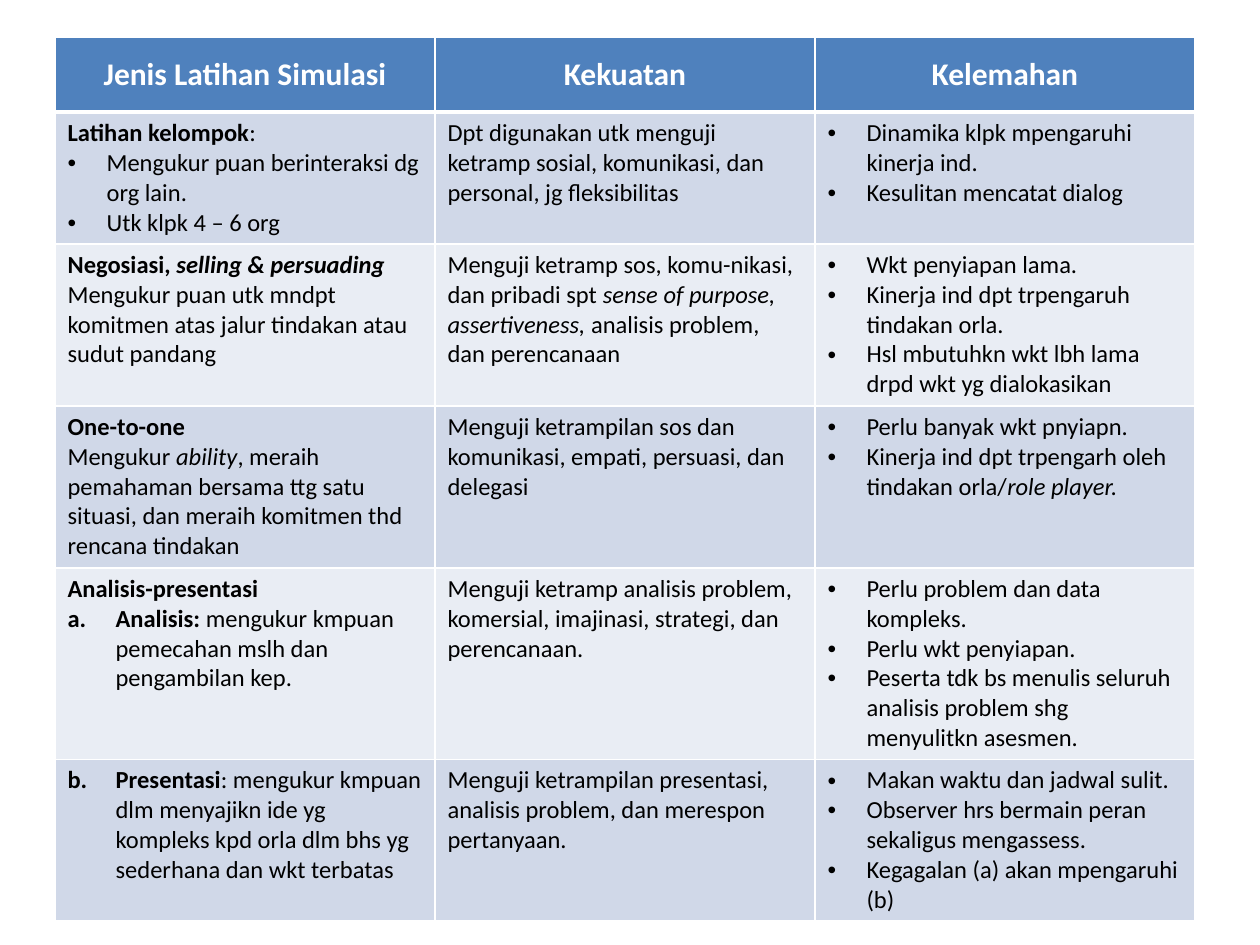
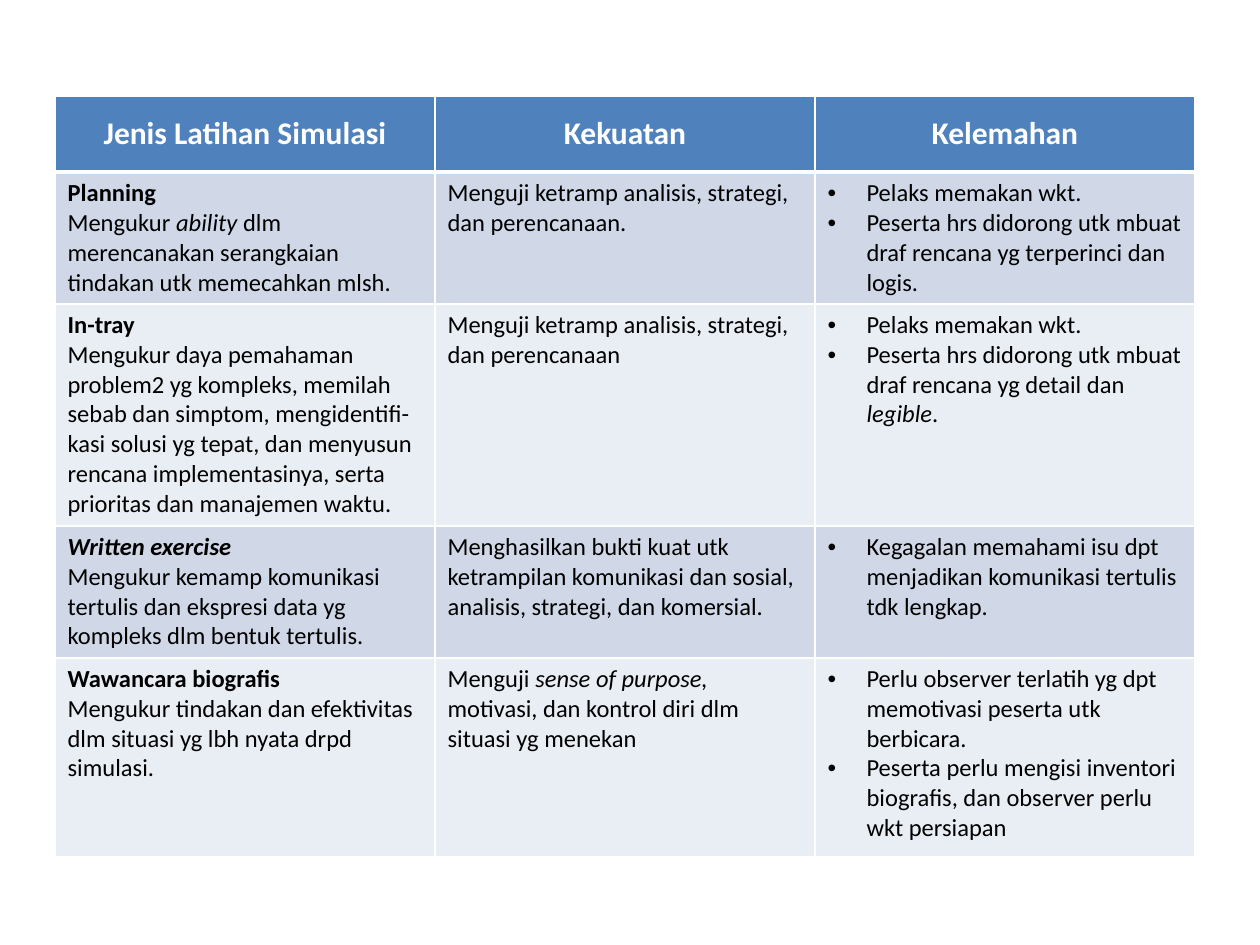
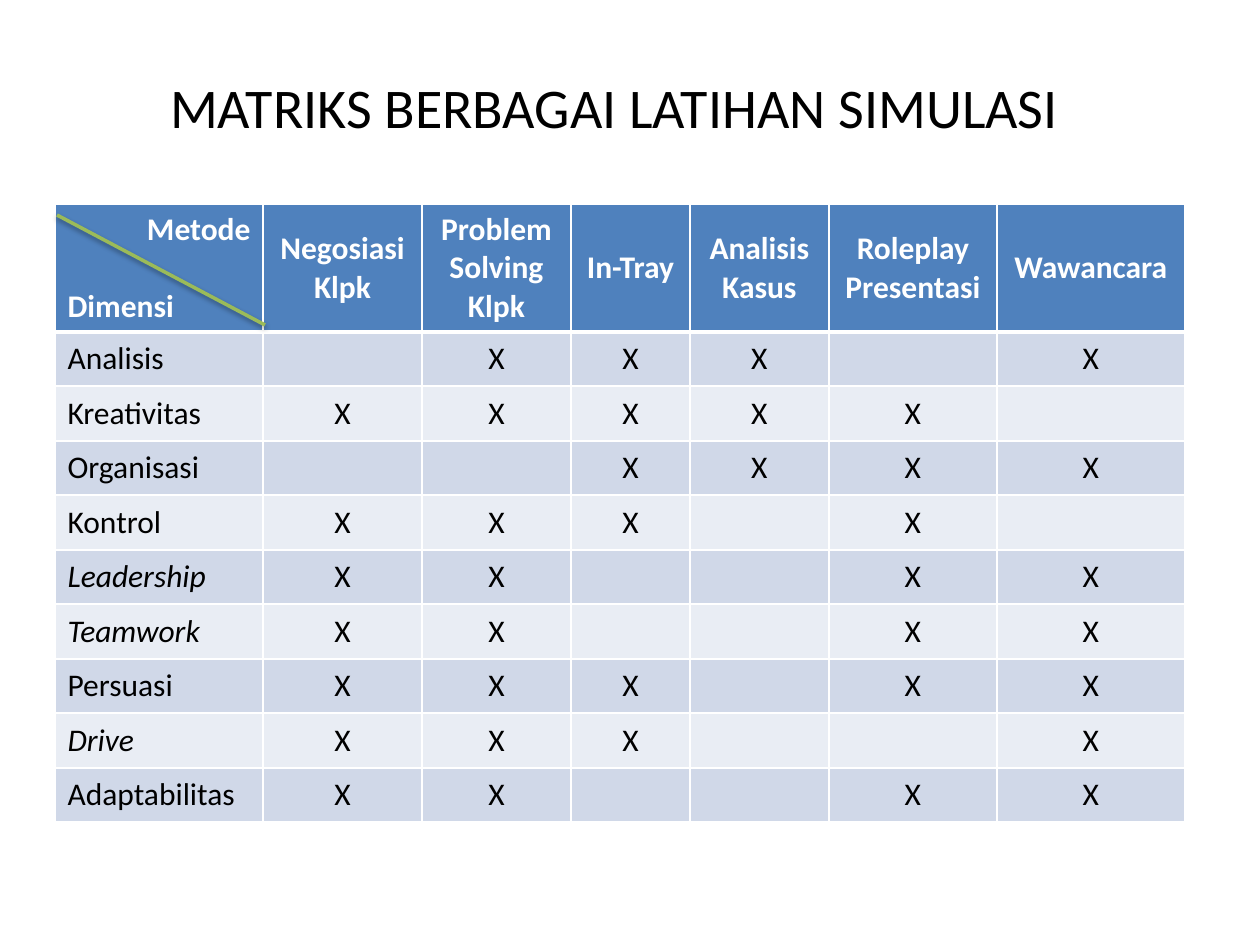
from lxml.etree import SubElement
from pptx import Presentation
from pptx.dml.color import RGBColor as RGB
from pptx.enum.shapes import MSO_CONNECTOR as LINK
from pptx.enum.text import MSO_ANCHOR as ANCHOR, MSO_AUTO_SIZE as FIT, PP_ALIGN as ALIGN
from pptx.oxml.ns import qn
from pptx.util import Emu, Pt

SCALE = 914400 / 126  # EMU in one px
WIDE, HIGH = 1260, 945
LEFT = 55

FONT = "Calibri"
WHITE = RGB(0xFF, 0xFF, 0xFF)
BLACK = RGB(0x00, 0x00, 0x00)
BLUE = RGB(0x4F, 0x81, 0xBD)
GREEN = RGB(0x9B, 0xBB, 0x59)
BANDS = RGB(0xE9, 0xED, 0xF4), RGB(0xD0, 0xD8, 0xE8)

BULLET = "• "
LETTERS = "a. ", "b. "


def px(n):
    return Emu(round(n * SCALE))


def node(parent, tag, **attrs):
    return SubElement(parent, qn(tag), {k: str(v) for k, v in attrs.items()})


class Deck:
    """Holds the style and the current slide."""

    def __init__(self):
        self.prs = Presentation()
        self.prs.slide_width, self.prs.slide_height = px(WIDE), px(HIGH)
        self.slide = None

    def add(self, layout):
        self.slide = self.prs.slides.add_slide(self.prs.slide_layouts[layout])

    def title(self, text, x, y, w, h):
        box = self.slide.shapes.title
        box.left, box.top, box.width, box.height = map(px, (x, y, w, h))
        box.text_frame.auto_size = FIT.NONE
        par = box.text_frame.paragraphs[0]
        par.alignment = ALIGN.CENTER
        self.runs(par, text, 32, BLACK)

    def runs(self, par, text, size, color, bold=False):
        """Add runs; *stars* mark bold and _bars_ mark italic."""
        for i, part in enumerate(text.split("*")):
            for j, bit in enumerate(part.split("_")):
                if bit:
                    run = par.add_run()
                    run.text = bit
                    font = run.font
                    font.name, font.size = FONT, Pt(size)
                    font.bold, font.italic = bold or i % 2 == 1, j % 2 == 1
                    font.color.rgb = color

    def mark(self, par, text):
        """Turn a leading bullet or letter into a list mark; return the rest."""
        if not text.startswith((BULLET, *LETTERS)):
            return text
        ppr = par._p.get_or_add_pPr()
        dot = text.startswith(BULLET)
        indent = px(39 if dot else 48)
        ppr.set("marL", str(indent))
        ppr.set("indent", str(-indent))
        if dot:
            node(ppr, "a:buFont", typeface="Arial")
            node(ppr, "a:buChar", char="•")
        else:
            start = LETTERS.index(text[:3]) + 1
            node(ppr, "a:buFont", typeface="+mj-lt")
            node(ppr, "a:buAutoNum", type="alphaLcPeriod", startAt=start)
        return text.split(" ", 1)[1]

    def edges(self, cell, row):
        thick = {"B": 3} if row == 0 else {"T": 3} if row == 1 else {}
        for side in "LRTB":
            line = node(cell._tc.get_or_add_tcPr(), "a:ln" + side,
                        w=Pt(thick.get(side, 1)))
            node(node(line, "a:solidFill"), "a:srgbClr", val=WHITE)

    def cell(self, cell, row, pars, size, align, anchor):
        """Fill a cell; the first row is the header."""
        head = row == 0
        self.edges(cell, row)
        cell.fill.solid()
        cell.fill.fore_color.rgb = BLUE if head else BANDS[row % 2]
        cell.vertical_anchor = ANCHOR.MIDDLE if head else anchor
        frame = cell.text_frame
        for n, text in enumerate(pars):
            par = frame.add_paragraph() if n else frame.paragraphs[0]
            par.alignment = ALIGN.CENTER if head else align
            text = self.mark(par, text)
            self.runs(par, text, 18 if head else size,
                      WHITE if head else BLACK, head)

    def table(self, top, cols, rows, data, size, anchor=ANCHOR.TOP, rest=ALIGN.LEFT):
        """Draw rows of cells; rest aligns the columns after the first."""
        frame = self.slide.shapes.add_table(
            len(rows), len(cols), px(LEFT), px(top), px(sum(cols)), px(sum(rows)))
        grid = frame.table
        grid.horz_banding = False
        for col, w in zip(grid.columns, cols):
            col.width = px(w)
        for row, h in zip(grid.rows, rows):
            row.height = px(h)
        for r, line in enumerate(data):
            for c, pars in enumerate(line):
                self.cell(grid.cell(r, c), r, pars, size,
                          rest if c else ALIGN.LEFT, anchor)
        return grid

    def line(self, x1, y1, x2, y2, color, width):
        link = self.slide.shapes.add_connector(
            LINK.STRAIGHT, px(x1), px(y1), px(x2), px(y2))
        link.line.color.rgb, link.line.width = color, Pt(width)
        glow = node(node(link._element.spPr, "a:effectLst"), "a:outerShdw",
                    blurRad=Pt(3.1), dist=Pt(1.6), dir=90 * 60000, rotWithShape=0)
        node(node(glow, "a:srgbClr", val=BLACK), "a:alpha", val=38000)


# Header and columns of the two exercise tables
HEAD = [["Jenis Latihan Simulasi"], ["Kekuatan"], ["Kelemahan"]]
THIRDS = [380] * 3

GROUP = [
    [["*Latihan kelompok*:",
      "• Mengukur puan berinteraksi dg org lain.",
      "• Utk klpk 4 – 6 org"],
     ["Dpt digunakan utk menguji ketramp sosial, komunikasi, dan personal, jg fleksibilitas"],
     ["• Dinamika klpk mpengaruhi kinerja ind.",
      "• Kesulitan mencatat dialog"]],
    [["*Negosiasi, _selling & persuading_*",
      "Mengukur puan utk mndpt komitmen atas jalur tindakan atau sudut pandang"],
     ["Menguji ketramp sos, komu-nikasi, dan pribadi spt _sense of purpose, assertiveness, _"
      "analisis problem, dan perencanaan"],
     ["• Wkt penyiapan lama.",
      "• Kinerja ind dpt trpengaruh tindakan orla.",
      "• Hsl mbutuhkn wkt lbh lama drpd wkt yg dialokasikan"]],
    [["*One-to-one*",
      "Mengukur _ability_, meraih pemahaman bersama ttg satu situasi, "
      "dan meraih komitmen thd rencana tindakan"],
     ["Menguji ketrampilan sos dan komunikasi, empati, persuasi, dan delegasi"],
     ["• Perlu banyak wkt pnyiapn.",
      "• Kinerja ind dpt trpengarh oleh tindakan orla/_role player._"]],
    [["*Analisis-presentasi*",
      "a. *Analisis: *mengukur kmpuan pemecahan mslh dan pengambilan kep."],
     ["Menguji ketramp analisis problem, komersial, imajinasi, strategi, dan perencanaan."],
     ["• Perlu problem dan data kompleks.",
      "• Perlu wkt penyiapan.",
      "• Peserta tdk bs menulis seluruh analisis problem shg menyulitkn asesmen."]],
    [["b. *Presentasi*: mengukur kmpuan dlm menyajikn ide yg kompleks kpd orla "
      "dlm bhs yg sederhana dan wkt terbatas"],
     ["Menguji ketrampilan presentasi, analisis problem, dan merespon pertanyaan."],
     ["• Makan waktu dan jadwal sulit.",
      "• Observer hrs bermain peran sekaligus mengassess.",
      "• Kegagalan (a) akan mpengaruhi (b)"]],
]

SOLO = [
    [["*Planning*",
      "Mengukur _ability _dlm merencanakan serangkaian tindakan utk memecahkan mlsh."],
     ["Menguji ketramp analisis, strategi, dan perencanaan."],
     ["• Pelaks memakan wkt.",
      "• Peserta hrs didorong utk mbuat draf rencana yg terperinci dan logis."]],
    [["*In-tray*",
      "Mengukur daya pemahaman problem2 yg kompleks, memilah sebab dan simptom, "
      "mengidentifi-kasi solusi yg tepat, dan menyusun rencana implementasinya, "
      "serta prioritas dan manajemen waktu."],
     ["Menguji ketramp analisis, strategi, dan perencanaan"],
     ["• Pelaks memakan wkt.",
      "• Peserta hrs didorong utk mbuat draf rencana yg detail dan _legible_."]],
    [["*_Written exercise_*",
      "Mengukur kemamp komunikasi tertulis dan ekspresi data yg kompleks "
      "dlm bentuk tertulis."],
     ["Menghasilkan bukti kuat utk ketrampilan komunikasi dan sosial, analisis, "
      "strategi, dan komersial."],
     ["• Kegagalan memahami isu dpt menjadikan komunikasi tertulis tdk lengkap."]],
    [["*Wawancara biografis*",
      "Mengukur tindakan dan efektivitas dlm situasi yg lbh nyata drpd simulasi."],
     ["Menguji _sense of purpose, _motivasi, dan kontrol diri dlm situasi yg menekan"],
     ["• Perlu observer terlatih yg dpt memotivasi peserta utk berbicara.",
      "• Peserta perlu mengisi inventori biografis, dan observer perlu wkt persiapan"]],
]

# Matrix of dimensions against methods
METHODS = [["Metode", "Dimensi"], ["Negosiasi Klpk"], ["Problem Solving Klpk"],
           ["In-Tray"], ["Analisis Kasus"], ["Roleplay Presentasi"], ["Wawancara"]]
MARKS = {
    "Analisis": "-XXX-X",
    "Kreativitas": "XXXXX-",
    "Organisasi": "--XXXX",
    "Kontrol": "XXX-X-",
    "_Leadership_": "XX--XX",
    "_Teamwork_": "XX--XX",
    "Persuasi": "XXX-XX",
    "_Drive_": "XXX--X",
    "Adaptabilitas": "XX--XX",
}


def matrix(deck):
    deck.add(5)
    deck.title("MATRIKS BERBAGAI LATIHAN SIMULASI", 74, 66, 1081, 81)
    data = [METHODS] + [
        [[name]] + [["X"] if m == "X" else [] for m in marks]
        for name, marks in MARKS.items()]
    grid = deck.table(204, [208, 159, 149, 119, 139, 168, 188],
                      [127] + [54, 55] * 4 + [54], data, 18,
                      ANCHOR.MIDDLE, ALIGN.CENTER)
    # Split corner cell
    top, low = grid.cell(0, 0).text_frame.paragraphs
    top.alignment, low.alignment = ALIGN.RIGHT, ALIGN.LEFT
    low.space_before = Pt(22)
    deck.line(57, 215, 265, 325, GREEN, 2)


def main():
    deck = Deck()
    for top, rows, data in (
            (37, [75, 132, 162, 162, 191, 161], GROUP),
            (96, [76, 131, 222, 131, 199], SOLO)):
        deck.add(6)
        deck.table(top, THIRDS, rows, [HEAD] + data, 14)
    matrix(deck)
    deck.prs.save("out.pptx")


if __name__ == "__main__":
    main()
